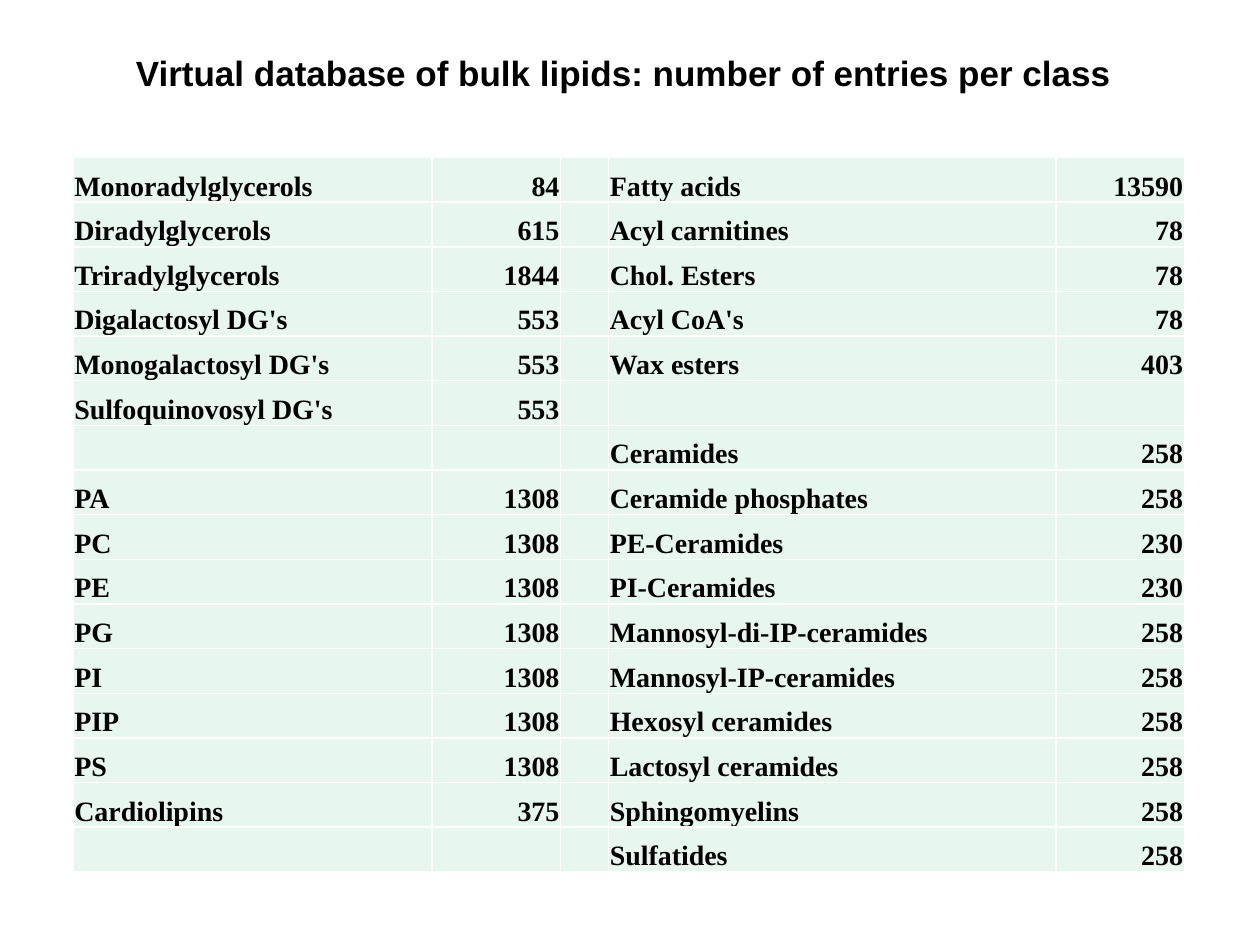
from dataclasses import dataclass
from itertools import zip_longest

from lxml import etree
from pptx import Presentation
from pptx import util as u
from pptx.dml.color import RGBColor
from pptx.enum import text
from pptx.oxml.ns import qn

COLORS = {"ink": "000000", "mint": "E7F6EF", "rule": "FFFFFF"}
SLIDE_WIDTH, SLIDE_HEIGHT = 10, 7.5
COLUMN_WIDTHS = [2.85, 1.02, 0.38, 3.55, 1.02]
TABLE_LEFT, TABLE_TOP, TABLE_HEIGHT = 0.58, 1.25, 5.67


@dataclass(frozen=True)
class LipidClass:
    name: str = ""
    entries: str = ""


BLANK = LipidClass()
GLYCEROLIPIDS = [
    LipidClass("Monoradylglycerols", "84"),
    LipidClass("Diradylglycerols", "615"),
    LipidClass("Triradylglycerols", "1844"),
    *(LipidClass(f"{head} DG's", "553")
      for head in ("Digalactosyl", "Monogalactosyl", "Sulfoquinovosyl")),
    BLANK,
    *(LipidClass(head, "1308")
      for head in ("PA", "PC", "PE", "PG", "PI", "PIP", "PS")),
    LipidClass("Cardiolipins", "375"),
]
FATTY_ACYLS_AND_SPHINGOLIPIDS = [
    LipidClass("Fatty acids", "13590"),
    *(LipidClass(name, "78")
      for name in ("Acyl carnitines", "Chol. Esters", "Acyl CoA's")),
    LipidClass("Wax esters", "403"),
    BLANK,
    LipidClass("Ceramides", "258"),
    LipidClass("Ceramide phosphates", "258"),
    LipidClass("PE-Ceramides", "230"),
    LipidClass("PI-Ceramides", "230"),
    *(LipidClass(name, "258")
      for name in ("Mannosyl-di-IP-ceramides", "Mannosyl-IP-ceramides",
                   "Hexosyl ceramides", "Lactosyl ceramides",
                   "Sphingomyelins", "Sulfatides")),
]


def set_all(target, values: dict) -> None:
    for name, value in values.items():
        setattr(target, name, value)


def write(para, words: str, font: str, size: float, align) -> None:
    para.alignment = align
    span = para.add_run()
    span.text = words
    set_all(span.font, {"name": font, "size": u.Pt(size), "bold": True})
    span.font.color.rgb = RGBColor.from_string(COLORS["ink"])


def add_borders(cell, color: str, width: float) -> None:
    properties = cell._tc.get_or_add_tcPr()
    for index, side in enumerate(("lnL", "lnR", "lnT", "lnB")):
        line = etree.Element(qn(f"a:{side}"), w=str(u.Pt(width)))
        fill = etree.SubElement(line, qn("a:solidFill"))
        etree.SubElement(fill, qn("a:srgbClr"), val=color)
        properties.insert(index, line)


def fill_cell(cell, words: str, align) -> None:
    set_all(cell, {
        "margin_left": u.Inches(0.01), "margin_right": u.Inches(0.01),
        "margin_top": u.Inches(0.01), "margin_bottom": 0,
        "vertical_anchor": text.MSO_ANCHOR.BOTTOM,
    })
    cell.fill.solid()
    cell.fill.fore_color.rgb = RGBColor.from_string(COLORS["mint"])
    add_borders(cell, COLORS["rule"], 1)
    if words:
        write(cell.text_frame.paragraphs[0], words, "Times New Roman", 16, align)


def add_title(page, words: str) -> None:
    box = page.shapes.title
    set_all(box, {"left": u.Inches(0.17), "top": u.Inches(0.33),
                  "width": u.Inches(9.56), "height": u.Inches(0.44)})
    set_all(box.text_frame, {
        "word_wrap": True, "auto_size": text.MSO_AUTO_SIZE.NONE,
        "vertical_anchor": text.MSO_ANCHOR.TOP,
        "margin_left": u.Inches(0.1), "margin_right": u.Inches(0.1),
        "margin_top": u.Inches(0.08), "margin_bottom": u.Inches(0.02),
    })
    write(box.text_frame.paragraphs[0], words, "Arial", 20,
          text.PP_ALIGN.CENTER)


def add_lipid_table(page, left_block: list[LipidClass],
                    right_block: list[LipidClass]) -> None:
    pairs = list(zip_longest(left_block, right_block, fillvalue=BLANK))
    table = page.shapes.add_table(
        len(pairs), len(COLUMN_WIDTHS), u.Inches(TABLE_LEFT),
        u.Inches(TABLE_TOP), u.Inches(sum(COLUMN_WIDTHS)),
        u.Inches(TABLE_HEIGHT)).table
    set_all(table, {"first_row": False, "horz_banding": False})
    for column, width in zip(table.columns, COLUMN_WIDTHS):
        column.width = u.Inches(width)

    # Names left, entry counts right, an empty gutter between the blocks
    left, right = text.PP_ALIGN.LEFT, text.PP_ALIGN.RIGHT
    alignments = [left, right, left, left, right]
    for row, (first, second) in zip(table.rows, pairs):
        values = [first.name, first.entries, "", second.name, second.entries]
        for cell, words, align in zip(row.cells, values, alignments):
            fill_cell(cell, words, align)


def main() -> None:
    deck = Presentation()
    deck.slide_width = u.Inches(SLIDE_WIDTH)
    deck.slide_height = u.Inches(SLIDE_HEIGHT)
    page = deck.slides.add_slide(deck.slide_layouts.get_by_name("Title Only"))
    add_title(page, "Virtual database of bulk lipids: number of entries per class")
    add_lipid_table(page, GLYCEROLIPIDS, FATTY_ACYLS_AND_SPHINGOLIPIDS)
    deck.save("out.pptx")


if __name__ == "__main__":
    main()
